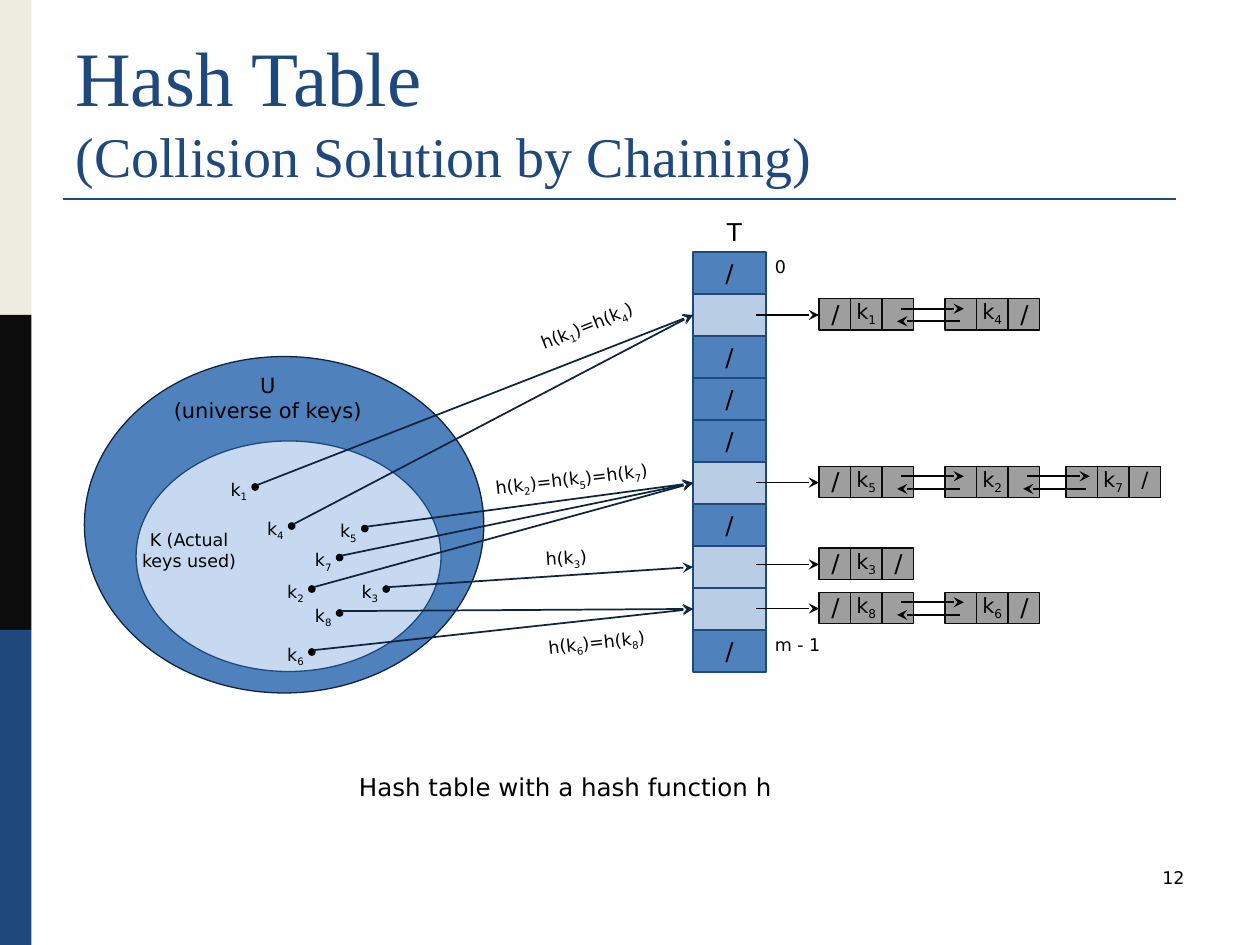
import pptx
import pptx.util
import pptx.dml.color
import pptx.enum.shapes
import pptx.enum.text
import pptx.oxml
import pptx.oxml.ns

Inches, Pt = pptx.util.Inches, pptx.util.Pt
KIND = pptx.enum.shapes.MSO_SHAPE
ALIGN = pptx.enum.text.PP_ALIGN
ANCHOR = pptx.enum.text.MSO_ANCHOR

SANS, SERIF = "DejaVu Sans", "Times New Roman"
NAVY, DARK, BLUE = "1F497D", "0F243E", "4F81BD"
PALE, LIGHT, GREY = "B9CDE5", "C6D9F1", "9E9E9E"
CREAM, COAL, INK, BLACK = "EEECE1", "0C0C0C", "060606", "000000"

ROW, CELL = 1 / 3, 0.25
SLOTS = 10
# Slot number -> keys chained there, and top of the chain within the table
CHAINS = {1: ("14", 0.37), 5: ("527", 1.7), 7: ("3", 2.35), 8: ("86", 2.7)}
# Key -> place of its label within the universe
KEYS = {
    "1": (1.16, 0.92), "4": (1.45, 1.23), "5": (2.03, 1.25), "7": (1.83, 1.48),
    "2": (1.61, 1.73), "3": (2.2, 1.73), "8": (1.83, 1.92), "6": (1.61, 2.23),
}
# Text, left, top, width, turn
HASHES = [
    ("h(k_1)=h(k_4)", 4.27, 2.44, 0.83, -21.6),
    ("h(k_2)=h(k_5)=h(k_7)", 3.93, 3.66, 1.33, -6.5),
    ("h(k_3)", 4.33, 4.29, 0.45, -3.5),
    ("h(k_6)=h(k_8)", 4.35, 4.96, 0.83, -6),
]


def color(code):
    return pptx.dml.color.RGBColor.from_string(code)


def write(shape, text, size, align=ALIGN.LEFT, pads=(0.1, 0.05, 0.1, 0.05),
          anchor=ANCHOR.TOP, font=SANS, ink=BLACK):
    """Fill the shape with text; the character after each _ is a subscript."""
    frame = shape.text_frame
    frame.word_wrap = True
    frame.vertical_anchor = anchor
    (frame.margin_left, frame.margin_top,
     frame.margin_right, frame.margin_bottom) = map(Inches, pads)
    for i, line in enumerate(text.split("\n")):
        para = frame.add_paragraph() if i else frame.paragraphs[0]
        para.alignment = align
        para.font.size, para.font.name = Pt(size), font
        para.font.color.rgb = color(ink)
        first, *rest = line.split("_")
        para.add_run().text = first
        for part in rest:
            sub = para.add_run()
            sub.text = part[0]
            sub._r.get_or_add_rPr().set("baseline", "-25000")
            if part[1:]:
                para.add_run().text = part[1:]


def label(slide, box, text, size, **style):
    shape = slide.shapes.add_textbox(*map(Inches, box))
    write(shape, text, size, **style)
    return shape


def block(slide, box, fill, edge=None, kind=KIND.RECTANGLE):
    shape = slide.shapes.add_shape(kind, *map(Inches, box))
    shape.shadow.inherit = False
    shape.fill.solid()
    shape.fill.fore_color.rgb = color(fill)
    if edge:
        shape.line.color.rgb = color(edge)
        shape.line.width = Pt(0.75)
    else:
        shape.line.fill.background()
    return shape


def rule(slide, start, end, ink, width=1, arrow=True):
    """Draw a straight line, with an arrowhead at its end if asked."""
    line = slide.shapes.add_connector(
        pptx.enum.shapes.MSO_CONNECTOR.STRAIGHT, *map(Inches, (*start, *end)))
    line.line.color.rgb = color(ink)
    line.line.width = Pt(width)
    if arrow:
        tip = pptx.oxml.parse_xml(
            f'<a:tailEnd {pptx.oxml.ns.nsdecls("a")} type="stealth"/>')
        line.line._get_or_add_ln().append(tip)
    line._element.spPr.append(
        pptx.oxml.parse_xml(f'<a:effectLst {pptx.oxml.ns.nsdecls("a")}/>'))


def draw_frame(slide, wide, high):
    for i, fill in enumerate((CREAM, COAL, NAVY)):
        block(slide, (0, i * high / 3, 0.25, high / 3), fill)
    rule(slide, (0.5, 1.58), (9.33, 1.58), NAVY, 1.5, arrow=False)
    label(slide, (wide - 2.83, high - 0.67, 2.33, 0.5), "12", 10, align=ALIGN.RIGHT)


def draw_title(slide, box):
    shape = label(slide, box, "Hash Table", 44, font=SERIF, ink=NAVY,
                  anchor=ANCHOR.BOTTOM)
    para = shape.text_frame.paragraphs[0]
    para.add_line_break()
    small = para.add_run()
    small.text = "(Collision Solution by Chaining)"
    small.font.size = Pt(32)


def draw_keys(slide, x, y):
    """Draw the universe of keys and return the point where each key's arrow starts."""
    block(slide, (x, y, 3.17, 2.67), BLUE, DARK, KIND.OVAL)
    block(slide, (x + 0.41, y + 0.67, 2.42, 1.83), LIGHT, NAVY, KIND.OVAL)
    label(slide, (x + 0.58, y + 0.08, 1.75, 0.5), "U\n(universe of keys)", 12,
          align=ALIGN.CENTER)
    label(slide, (x + 0.33, y + 1.32, 1, 0.44), "K (Actual\nkeys used)", 10,
          align=ALIGN.CENTER, pads=(0, 0.05, 0, 0.05))
    starts = {}
    for key, (dx, dy) in KEYS.items():
        left, top = x + dx, y + dy
        label(slide, (left, top, 0.2, 0.27), f"k_{key}", 10, pads=(0, 0.05, 0, 0.05))
        block(slide, (left + 0.17, top + 0.09, 0.05, 0.05), BLACK, BLACK, KIND.OVAL)
        starts[key] = left + 0.21, top + 0.1
    return starts


def draw_node(slide, x, y, key, first, last, end_size):
    parts = [("/" if first else "", 14), (f"k_{key}", 12), ("/" if last else "", end_size)]
    for i, (text, size) in enumerate(parts):
        cell = block(slide, (x + i * CELL, y, CELL, CELL), GREY, COAL)
        if text:
            side = 0.1 if text == "/" else 0
            write(cell, text, size, ALIGN.CENTER, (side, 0, side, 0))


def draw_chain(slide, x, y, keys):
    lefts = [x, x + 1, x + 1.96][:len(keys)]
    final = len(keys) - 1
    for i, (left, key) in enumerate(zip(lefts, keys)):
        draw_node(slide, left, y, key, i == 0, i == final, 12 if i == 2 else 14)
    for left in lefts[:-1]:
        rule(slide, (left + 0.65, y + 0.08), (left + 1.15, y + 0.08), INK)
        rule(slide, (left + 1.12, y + 0.18), (left + 0.62, y + 0.18), INK)


def draw_table(slide, x, y, starts):
    label(slide, (x + 0.17, y - 0.33, 0.33, 0.34), "T", 14)
    for i in range(SLOTS):
        slot = block(slide, (x, y + i * ROW, 0.58, ROW), PALE if i in CHAINS else BLUE, NAVY)
        if i not in CHAINS:
            write(slot, "/", 14, ALIGN.CENTER, anchor=ANCHOR.MIDDLE)
    for i, text in ((0, "0"), (SLOTS - 1, "m - 1")):
        label(slide, (x + 0.65, y + i * ROW - 0.02, 0.5, 0.27), text, 10,
              pads=(0, 0.05, 0, 0.05))
    for i, (keys, top) in CHAINS.items():
        for key in keys:
            rule(slide, starts[key], (x, y + (i + 0.5) * ROW), DARK)
        draw_chain(slide, x + 1, y + top, keys)
        mid = y + top + 0.13
        rule(slide, (x + 0.5, mid), (x + 1, mid), INK)


def draw_hashes(slide):
    for text, left, top, wide, turn in HASHES:
        label(slide, (left, top, wide, 0.27), text, 10,
              pads=(0, 0.05, 0, 0.05)).rotation = turn


def main():
    deck = pptx.Presentation()
    deck.slide_width, deck.slide_height = Inches(10), Inches(7.5)
    slide = deck.slides.add_slide(deck.slide_layouts[6])
    draw_frame(slide, 10, 7.5)
    draw_title(slide, (0.5, 0.3, 9, 1.25))
    starts = draw_keys(slide, 0.67, 2.83)
    draw_table(slide, 5.5, 2, starts)
    draw_hashes(slide)
    label(slide, (2.75, 6.08, 4.92, 0.34), "Hash table with a hash function h", 14)
    deck.save("out.pptx")


if __name__ == "__main__":
    main()
